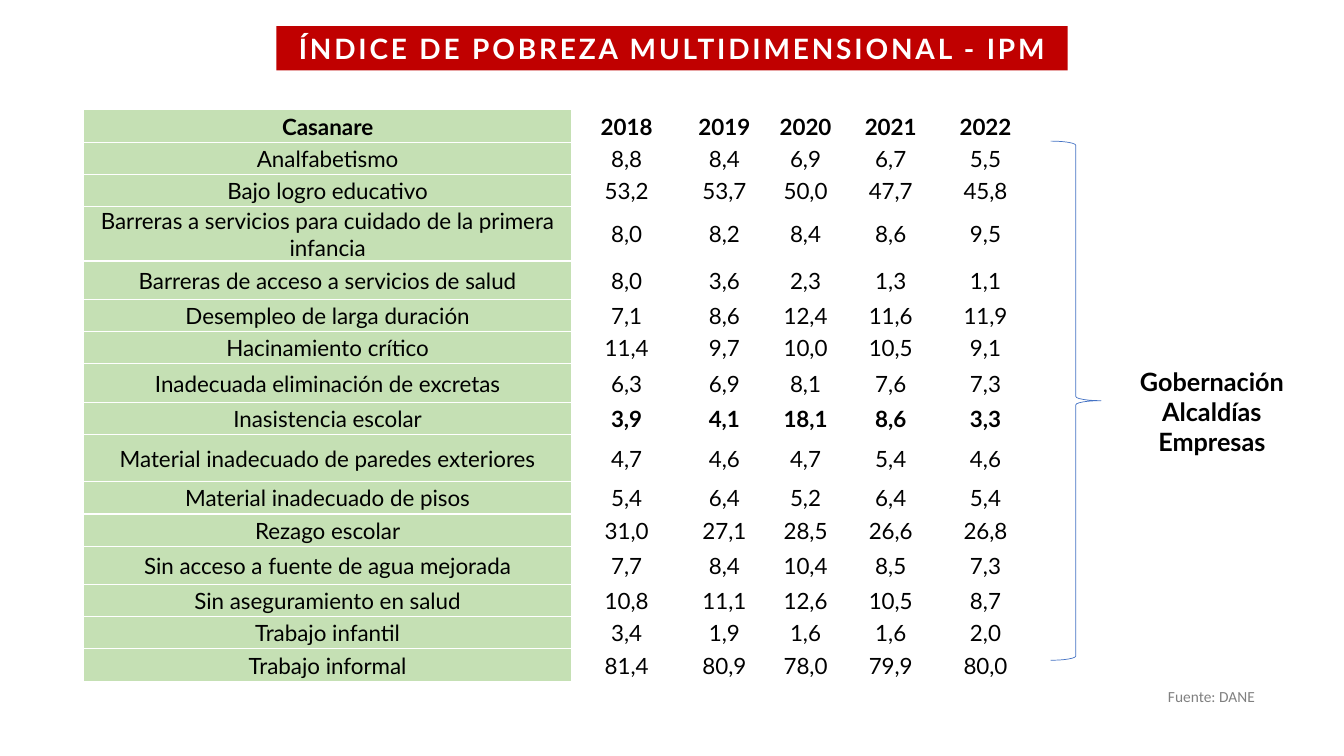
from lxml import etree
from pptx import Presentation
from pptx import util as u
from pptx.dml import color
from pptx.enum import shapes, text
from pptx.oxml import ns

YEARS = ["2018", "2019", "2020", "2021", "2022"]
INDICATORS = [
    ("Analfabetismo", "8,8 8,4 6,9 6,7 5,5"),
    ("Bajo logro educativo", "53,2 53,7 50,0 47,7 45,8"),
    ("Barreras a servicios para cuidado de la primera infancia", "8,0 8,2 8,4 8,6 9,5"),
    ("Barreras de acceso a servicios de salud", "8,0 3,6 2,3 1,3 1,1"),
    ("Desempleo de larga duración", "7,1 8,6 12,4 11,6 11,9"),
    ("Hacinamiento crítico", "11,4 9,7 10,0 10,5 9,1"),
    ("Inadecuada eliminación de excretas", "6,3 6,9 8,1 7,6 7,3"),
    ("Inasistencia escolar", "3,9 4,1 18,1 8,6 3,3"),
    ("Material inadecuado de paredes exteriores", "4,7 4,6 4,7 5,4 4,6"),
    ("Material inadecuado de pisos", "5,4 6,4 5,2 6,4 5,4"),
    ("Rezago escolar", "31,0 27,1 28,5 26,6 26,8"),
    ("Sin acceso a fuente de agua mejorada", "7,7 8,4 10,4 8,5 7,3"),
    ("Sin aseguramiento en salud", "10,8 11,1 12,6 10,5 8,7"),
    ("Trabajo infantil", "3,4 1,9 1,6 1,6 2,0"),
    ("Trabajo informal", "81,4 80,9 78,0 79,9 80,0"),
]
HIGHLIGHTED = "Inasistencia escolar"
COLUMN_WIDTHS = [4.84, 1.09, 0.85, 0.76, 0.93, 0.95]
ROW_HEIGHT = 0.32
TALLER_ROWS = {3: 0.47, 4: 0.38, 7: 0.38, 9: 0.47, 12: 0.38}


def rgb(value):
    """Turn a hex string into a colour."""
    return color.RGBColor.from_string(value)


def inches(box):
    """Turn left, top, width and height into lengths."""
    return [u.Inches(length) for length in box]


def write(frame, lines, size, font="Lato", ink="000000", bold=False):
    """Fill a text frame with centred lines in one style."""
    frame.text = "\n".join(lines)
    for paragraph in frame.paragraphs:
        paragraph.alignment = text.PP_ALIGN.CENTER
        paragraph.font.size = u.Pt(size)
        paragraph.font.name = font
        paragraph.font.bold = bold
        paragraph.font.color.rgb = rgb(ink)


def add_title(slide, box):
    """Place the red title band with its letter-spaced heading on one line."""
    band = slide.shapes.add_shape(shapes.MSO_SHAPE.RECTANGLE, *inches(box))
    band.shadow.inherit = False
    band.fill.solid()
    band.fill.fore_color.rgb = rgb("C00000")
    band.line.fill.background()
    frame = band.text_frame
    frame.word_wrap = False
    frame.vertical_anchor = text.MSO_ANCHOR.MIDDLE
    write(frame, ["ÍNDICE DE POBREZA MULTIDIMENSIONAL - IPM"], 20, ink="FFFFFF", bold=True)
    heading = frame.paragraphs[0].runs[0]
    heading._r.get_or_add_rPr().set("spc", "200")


def add_borders(cell, ink, width):
    """Draw the four borders of a table cell."""
    properties = cell._tc.get_or_add_tcPr()
    for position, side in enumerate(["lnL", "lnR", "lnT", "lnB"]):
        border = etree.Element(ns.qn(f"a:{side}"), w=str(u.Pt(width)))
        fill = etree.SubElement(border, ns.qn("a:solidFill"))
        etree.SubElement(fill, ns.qn("a:srgbClr"), val=ink)
        properties.insert(position, border)


def add_indicators(slide, box):
    """Place the table of indicators by year."""
    rows = [["Casanare", *YEARS]]
    rows += [[indicator, *values.split()] for indicator, values in INDICATORS]
    table = slide.shapes.add_table(len(rows), len(rows[0]), *inches(box)).table
    table.first_row = table.horz_banding = False
    for column, width in zip(table.columns, COLUMN_WIDTHS):
        column.width = u.Inches(width)
    for r, values in enumerate(rows):
        table.rows[r].height = u.Inches(TALLER_ROWS.get(r, ROW_HEIGHT))
        for c, value in enumerate(values):
            cell = table.cell(r, c)
            cell.margin_left = cell.margin_right = cell.margin_top = u.Inches(0.01)
            cell.margin_bottom = 0
            cell.vertical_anchor = text.MSO_ANCHOR.MIDDLE
            cell.fill.solid()
            cell.fill.fore_color.rgb = rgb("FFFFFF" if c else "C5E0B4")
            bold = r == 0 or (c > 0 and values[0] == HIGHLIGHTED)
            write(cell.text_frame, [value], 16, bold=bold)
            add_borders(cell, "FFFFFF", 1)


def add_brace(slide, box):
    """Place the brace that gathers the indicators."""
    brace = slide.shapes.add_shape(shapes.MSO_SHAPE.RIGHT_BRACE, *inches(box))
    brace.shadow.inherit = False
    brace.fill.background()
    brace.line.color.rgb = rgb("4472C4")
    brace.line.width = u.Pt(0.5)


def add_label(slide, box, lines, size, **style):
    """Place a free label."""
    frame = slide.shapes.add_textbox(*inches(box)).text_frame
    frame.word_wrap = True
    write(frame, lines, size, **style)


def main():
    """Build the poverty index slide."""
    deck = Presentation()
    deck.slide_width, deck.slide_height = u.Inches(13.33), u.Inches(7.5)
    slide = deck.slides.add_slide(deck.slide_layouts[6])
    add_indicators(slide, (0.83, 1.09, 9.42, 5.68))
    add_label(slide, (11.47, 6.77, 1.09, 0.29), ["Fuente: DANE"], 11, font="Calibri", ink="808080")
    add_brace(slide, (10.42, 1.4, 0.5, 5.15))
    add_label(slide, (11.14, 3.58, 1.76, 1.01), ["Gobernación", "Alcaldías", "Empresas"], 18, bold=True)
    add_title(slide, (2.74, 0.26, 7.85, 0.44))
    deck.save("out.pptx")


if __name__ == "__main__":
    main()
